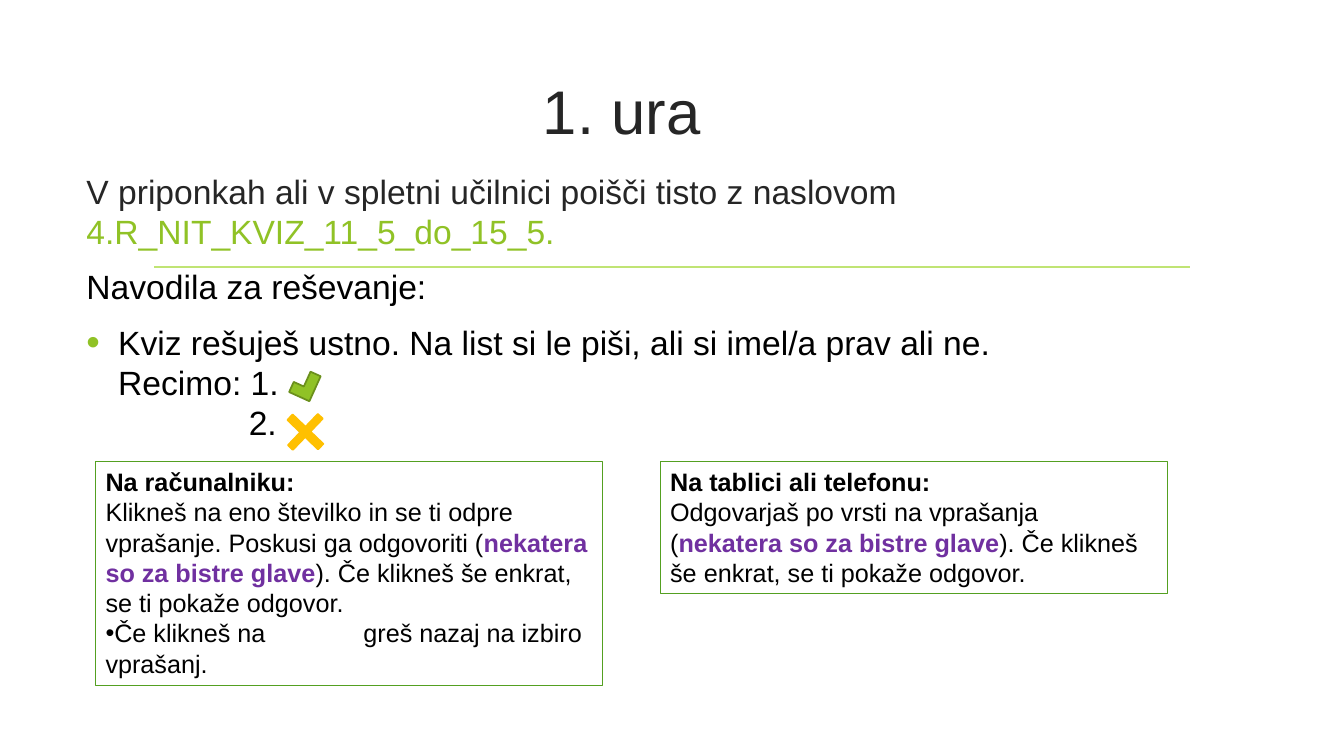
import lxml.etree
import pptx
import pptx.dml.color
import pptx.enum.shapes
import pptx.enum.text
import pptx.oxml.ns
import pptx.util

Cm, Pt = pptx.util.Cm, pptx.util.Pt
RGBColor = pptx.dml.color.RGBColor
Shapes = pptx.enum.shapes.MSO_SHAPE
Anchor = pptx.enum.text.MSO_ANCHOR
Align = pptx.enum.text.PP_ALIGN
qn = pptx.oxml.ns.qn

BLACK = RGBColor(0x00, 0x00, 0x00)
DARK = RGBColor(0x26, 0x26, 0x26)
GREEN = RGBColor(0x90, 0xC2, 0x26)
GREEN_EDGE = RGBColor(0x6B, 0x90, 0x1C)
GREEN_RULE = RGBColor(0xC0, 0xE4, 0x74)
CARD_EDGE = RGBColor(0x54, 0xA0, 0x21)
ORANGE = RGBColor(0xFF, 0xC0, 0x00)
PURPLE = RGBColor(0x70, 0x30, 0xA0)


def add_span(para, text, size=18, color=BLACK, bold=False):
    """Add formatted text; a vertical tab in it becomes a line break."""
    for index, line in enumerate(text.split("\v")):
        if index:
            para.add_line_break()
        if line:
            span = para.add_run()
            span.text = line
            span.font.name = "Arial"
            span.font.size = Pt(size)
            span.font.bold = bold
            span.font.color.rgb = color


def set_layout(para, left=0, hanging=0, bullet=None, tab=None):
    """Set indents, an optional (colour, percent) bullet and a tab stop."""
    props = para._p.get_or_add_pPr()
    props.set("marL", str(Cm(left)))
    props.set("indent", str(-Cm(hanging)))
    if bullet:
        color, percent = bullet
        holder = lxml.etree.SubElement(props, qn("a:buClr"))
        lxml.etree.SubElement(holder, qn("a:srgbClr"), val=str(color))
        lxml.etree.SubElement(props, qn("a:buSzPct"), val=str(percent * 1000))
        lxml.etree.SubElement(props, qn("a:buFont"), typeface="Arial")
        lxml.etree.SubElement(props, qn("a:buChar"), char="•")
    if tab:
        stops = lxml.etree.SubElement(props, qn("a:tabLst"))
        lxml.etree.SubElement(stops, qn("a:tab"), pos=str(Cm(tab)), algn="l")


def add_box(page, left, top, width, height):
    box = page.shapes.add_textbox(Cm(left), Cm(top), Cm(width), Cm(height))
    box.text_frame.word_wrap = True
    return box


def add_rule(page, left, top, width):
    rule = page.shapes.add_connector(
        pptx.enum.shapes.MSO_CONNECTOR.STRAIGHT,
        Cm(left), Cm(top), Cm(left + width), Cm(top))
    rule.line.color.rgb = GREEN_RULE
    rule.line.width = Pt(1.25)
    lxml.etree.SubElement(rule._element.spPr, qn("a:effectLst"))


def add_title(page, left, top, width, height):
    frame = add_box(page, left, top, width, height).text_frame
    frame.vertical_anchor = Anchor.MIDDLE
    para = frame.paragraphs[0]
    para.alignment = Align.CENTER
    add_span(para, "1. ura", size=44, color=DARK)


def add_instructions(page, left, top, width, height):
    frame = add_box(page, left, top, width, height).text_frame
    intro = frame.paragraphs[0]
    add_span(intro, "V priponkah ali v spletni učilnici poišči tisto z naslovom ",
             size=24, color=DARK)
    add_span(intro, "4.R_NIT_KVIZ_11_5_do_15_5.", size=24, color=GREEN)

    heading = frame.add_paragraph()
    add_span(heading, "Navodila za reševanje:", size=24)

    rule = frame.add_paragraph()
    set_layout(rule, left=0.8, hanging=0.8, bullet=(GREEN, 115))
    add_span(rule, "Kviz rešuješ ustno. Na list si le piši, ali si imel/a prav ali ne."
             "\vRecimo: 1.", size=24)

    second = frame.add_paragraph()
    set_layout(second, left=4.09)
    add_span(second, "2.", size=24)

    for para in (heading, rule):
        para.space_before = Pt(4.8)
    for para in (intro, heading):
        para.space_after = Pt(6)

    # Marks beside the two sample answers
    add_mark(page, Shapes.CORNER, left + 5.41, top + 5.23, 0.69, 0.56,
             rotation=294.3, fill=GREEN, edge=GREEN_EDGE)
    cross = add_mark(page, Shapes.CROSS, left + 5.23, top + 6.17, 1.07, 1.09,
                     rotation=43.8, fill=ORANGE, edge=ORANGE)
    cross.adjustments[0] = 0.42


def add_mark(page, kind, left, top, width, height, rotation, fill, edge):
    mark = page.shapes.add_shape(kind, Cm(left), Cm(top), Cm(width), Cm(height))
    mark.shadow.inherit = False
    mark.rotation = rotation
    mark.fill.solid()
    mark.fill.fore_color.rgb = fill
    mark.line.color.rgb = edge
    mark.line.width = Pt(1.25)
    return mark


def add_card(page, left, top, width, height, heading, task, note=None):
    card = add_box(page, left, top, width, height)
    card.line.color.rgb = CARD_EDGE
    card.line.width = Pt(0.75)
    para = card.text_frame.paragraphs[0]
    add_span(para, heading + "\v", bold=True)
    add_span(para, task + " (")
    add_span(para, "nekatera so za bistre glave", color=PURPLE, bold=True)
    add_span(para, "). Če klikneš še enkrat, se ti pokaže odgovor.")
    if note:
        para = card.text_frame.add_paragraph()
        set_layout(para, bullet=(BLACK, 100), tab=6.5)
        add_span(para, note)


def main():
    deck = pptx.Presentation()
    deck.slide_width, deck.slide_height = Cm(33.87), Cm(19.05)
    page = deck.slides.add_slide(deck.slide_layouts[6])

    add_rule(page, 3.89, 6.73, 26.11)
    add_title(page, 10.49, 1.55, 10.36, 2.44)
    add_instructions(page, 1.93, 4.17, 30.02, 12.17)

    # Two cards, one for each kind of device
    add_card(page, 2.41, 11.63, 12.78, 5.64, "Na računalniku:",
             "Klikneš na eno številko in se ti odpre vprašanje. Poskusi ga odgovoriti",
             note="Če klikneš na\tgreš nazaj na izbiro vprašanj.")
    add_card(page, 16.64, 11.63, 12.78, 3.33, "Na tablici ali telefonu:",
             "Odgovarjaš po vrsti na vprašanja")
    deck.save("out.pptx")


if __name__ == "__main__":
    main()
